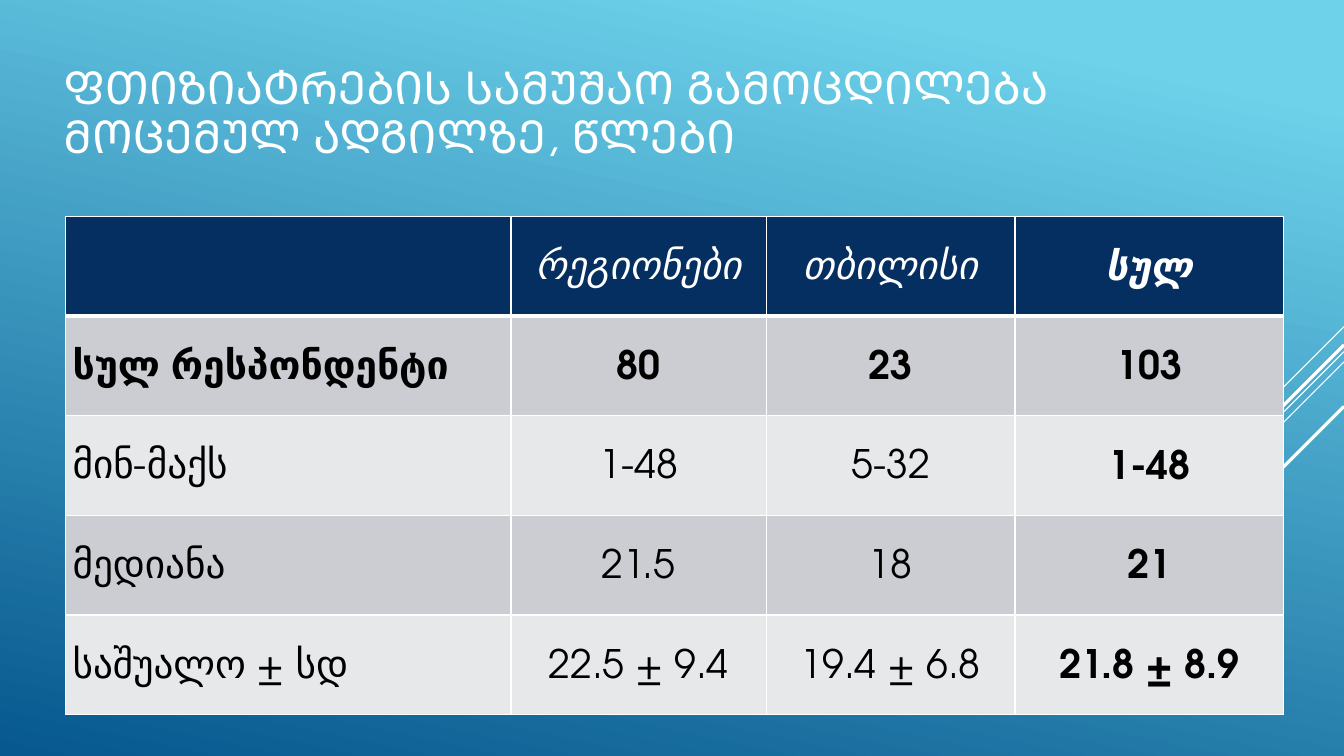
from lxml.etree import SubElement
from pptx import Presentation
from pptx.dml.color import RGBColor
from pptx.enum.shapes import MSO_CONNECTOR
from pptx.enum.text import MSO_ANCHOR, PP_ALIGN
from pptx.oxml.ns import qn
from pptx.util import Cm, Pt

FONT = "TeX Gyre Adventor"
COLORS = {
    "sky": "6ED2EB",
    "sea": "06588E",
    "navy": "052F61",
    "dark": "CCCDD2",
    "light": "E7E8EA",
    "white": "FFFFFF",
    "black": "000000",
}
WIDE, HIGH = 33.87, 19.05
TITLE = "ᲤᲗᲘᲖᲘᲐᲢᲠᲔᲑᲘᲡ ᲡᲐᲛᲣᲨᲐᲝ ᲒᲐᲛᲝᲪᲓᲘᲚᲔᲑᲐ ᲛᲝᲪᲔᲛᲣᲚ ᲐᲓᲒᲘᲚᲖᲔ, ᲬᲚᲔᲑᲘ"
RAYS = [
    (8.23, 2.54, 0.75),
    (8.86, 8.28, 0.75),
    (9.12, 5.27, 0.75),
    (8.69, 4.85, 2.25),
    (10.24, 3.53, 2.25),
]
COLS = [11.23, 6.43, 6.27, 6.76]
ROW = 2.51
ROWS = [
    ["", "რეგიონები", "თბილისი", "სულ"],
    ["სულ რესპონდენტი", "80", "23", "103"],
    ["მინ-მაქს", "1-48", "5-32", "1-48"],
    ["მედიანა", "21.5", "18", "21"],
    ["საშუალო ± სდ", "22.5 ± 9.4", "19.4 ± 6.8", "21.8 ± 8.9"],
]


def color(name):
    return RGBColor.from_string(COLORS[name])


def add_run(para, text, size, tint, bold=False, italic=False):
    run = para.add_run()
    run.text = text
    font = run.font
    font.name = FONT
    font.size = Pt(size)
    font.bold = bold
    font.italic = italic
    font.color.rgb = color(tint)


def paint_back(slide):
    fill = slide.background.fill
    fill.gradient()
    fill.gradient_angle = 258
    for stop, place, name in zip(fill.gradient_stops, (0.1, 1), ("sky", "sea")):
        stop.position = place
        stop.color.rgb = color(name)


def add_ray(slide, top, run, width):
    ray = slide.shapes.add_connector(
        MSO_CONNECTOR.STRAIGHT, Cm(WIDE), Cm(top), Cm(WIDE - run), Cm(top + run)
    )
    ray.line.color.rgb = color("white")
    ray.line.width = Pt(width)
    SubElement(ray._element.spPr, qn("a:effectLst"))


def add_title(slide):
    box = slide.shapes.add_textbox(Cm(1.35), Cm(1.32), Cm(29.08), Cm(3.12))
    frame = box.text_frame
    frame.word_wrap = True
    frame.vertical_anchor = MSO_ANCHOR.MIDDLE
    para = frame.paragraphs[0]
    para.line_spacing = 0.9
    add_run(para, TITLE, 32.4, "white")


def add_edges(cell, base):
    props = cell._tc.get_or_add_tcPr()
    for side, width in zip("LRTB", (1, 1, 1, base)):
        edge = SubElement(props, qn(f"a:ln{side}"), w=str(Pt(width)))
        fill = SubElement(edge, qn("a:solidFill"))
        SubElement(fill, qn("a:srgbClr"), val=COLORS["white"])


def fill_cell(cell, text, row, col):
    head = row == 0
    add_edges(cell, 3 if head else 1)
    cell.fill.solid()
    cell.fill.fore_color.rgb = color("navy" if head else ("light", "dark")[row % 2])
    cell.vertical_anchor = MSO_ANCHOR.MIDDLE
    cell.margin_left = cell.margin_right = Cm(0.18)
    cell.margin_top = cell.margin_bottom = 0
    para = cell.text_frame.paragraphs[0]
    para.line_spacing = 1.15
    para.alignment = PP_ALIGN.CENTER if col else PP_ALIGN.LEFT
    if text:
        bold = row == 1 or col == len(COLS) - 1
        add_run(para, text, 28, "white" if head else "black", bold, head)


def add_grid(slide):
    grid = slide.shapes.add_table(
        len(ROWS), len(COLS), Cm(1.65), Cm(5.46), Cm(sum(COLS)), Cm(ROW * len(ROWS))
    ).table
    for col, width in zip(grid.columns, COLS):
        col.width = Cm(width)
    for row, texts in enumerate(ROWS):
        grid.rows[row].height = Cm(ROW)
        for col, text in enumerate(texts):
            fill_cell(grid.cell(row, col), text, row, col)


def main():
    deck = Presentation()
    deck.slide_width, deck.slide_height = Cm(WIDE), Cm(HIGH)
    slide = deck.slides.add_slide(deck.slide_layouts[6])
    paint_back(slide)
    for ray in RAYS:
        add_ray(slide, *ray)
    add_title(slide)
    add_grid(slide)
    deck.save("out.pptx")


if __name__ == "__main__":
    main()
